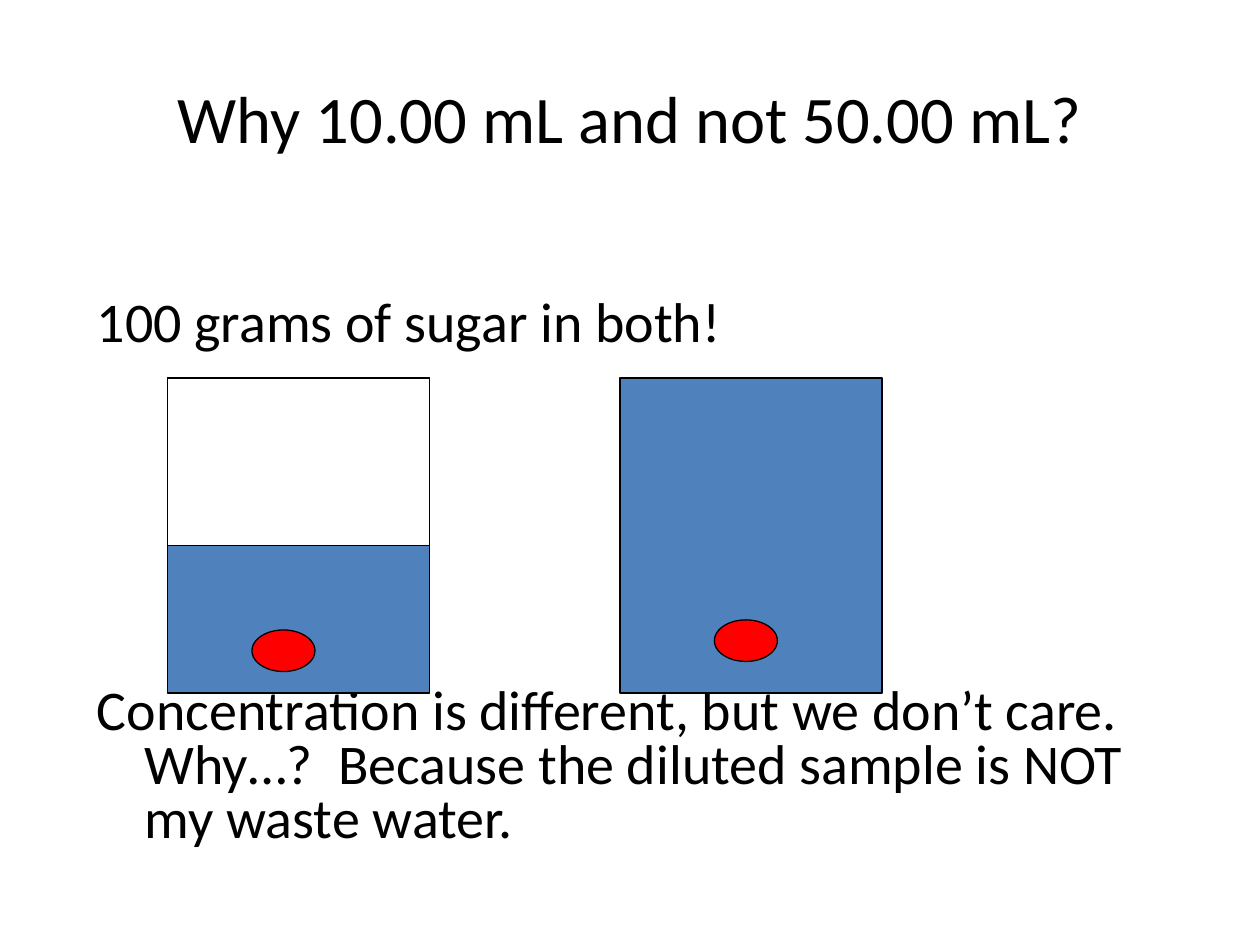
from pptx import Presentation
from pptx.dml.color import RGBColor
from pptx.enum.shapes import MSO_SHAPE as Shape
from pptx.enum.text import MSO_ANCHOR as Anchor, PP_ALIGN as Align
from pptx.util import Inches, Pt

COLORS = {"ink": "000000", "water": "4F81BD", "air": "FFFFFF", "sugar": "FF0000"}


class SlideBuilder:
    font_name = "Calibri"
    line_width = Pt(0.75)

    def __init__(self, slide):
        self.slide = slide

    def color(self, name):
        return RGBColor.from_string(COLORS[name])

    def text(self, box, lines, size, align=Align.LEFT, anchor=Anchor.TOP,
             hanging=0, line_spacing=1.0, gap=0):
        frame = self.slide.shapes.add_textbox(*map(Inches, box)).text_frame
        frame.word_wrap = True
        frame.vertical_anchor = anchor
        for index, line in enumerate(lines):
            paragraph = frame.add_paragraph() if index else frame.paragraphs[0]
            paragraph.text = line
            paragraph.alignment = align
            paragraph.line_spacing = line_spacing
            paragraph.space_before = Pt(gap if index else 0)
            paragraph.font.name = self.font_name
            paragraph.font.size = Pt(size)
            paragraph.font.color.rgb = self.color("ink")
            if hanging:
                properties = paragraph._p.get_or_add_pPr()
                properties.set("marL", str(Inches(hanging)))
                properties.set("indent", str(-Inches(hanging)))

    def shape(self, kind, box, fill):
        shape = self.slide.shapes.add_shape(kind, *map(Inches, box))
        shape.shadow.inherit = False
        shape.fill.solid()
        shape.fill.fore_color.rgb = self.color(fill)
        shape.line.color.rgb = self.color("ink")
        shape.line.width = self.line_width

    def rectangle(self, box, fill):
        self.shape(Shape.RECTANGLE, box, fill)

    def ellipse(self, box, fill):
        self.shape(Shape.OVAL, box, fill)


def main():
    presentation = Presentation()
    presentation.slide_width = Inches(10)
    presentation.slide_height = Inches(7.5)
    builder = SlideBuilder(presentation.slides.add_slide(presentation.slide_layouts[6]))

    builder.text((0.5, 0.3, 9, 1.25), ["Why 10.00 mL and not 50.00 mL?"], 38,
                 align=Align.CENTER, anchor=Anchor.MIDDLE)
    builder.text(
        (0.67, 2.33, 8.67, 4.83),
        ["100 grams of sugar in both!",
         "Concentration is different, but we don’t care.  Why…?  "
         "Because the diluted sample is NOT my waste water."],
        32, hanging=0.38, line_spacing=0.8, gap=191)

    beaker_top, beaker_width, beaker_height = 3, 2.08, 2.5
    beakers = [(1.33, 1.33, (2, 5)), (4.92, 0, (5.67, 4.92))]
    for left, air_height, sugar_position in beakers:
        builder.rectangle((left, beaker_top, beaker_width, beaker_height), "water")
        if air_height:
            builder.rectangle((left, beaker_top, beaker_width, air_height), "air")
        builder.ellipse((*sugar_position, 0.5, 0.33), "sugar")

    presentation.save("out.pptx")


if __name__ == "__main__":
    main()
